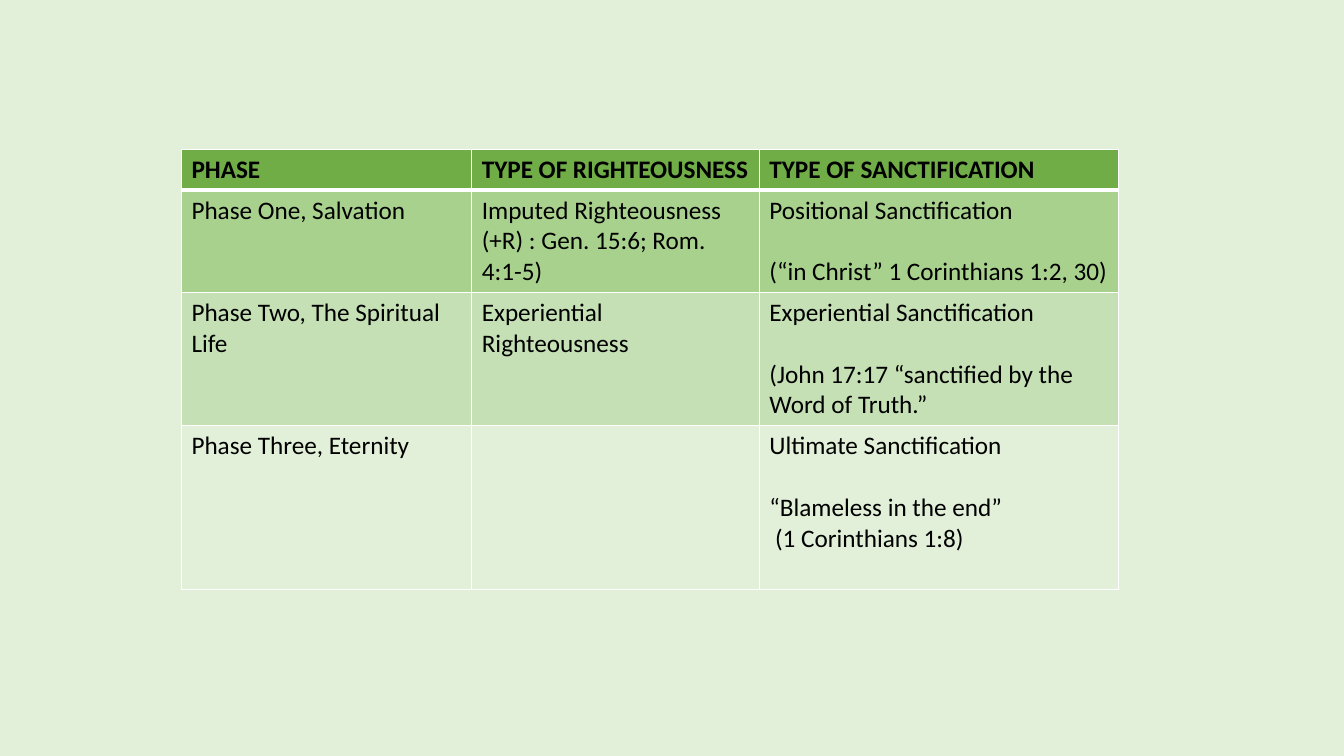
from dataclasses import dataclass

from lxml.etree import SubElement
from pptx import Presentation
from pptx.dml.color import RGBColor as Rgb
from pptx.oxml.ns import qn
from pptx.slide import Slide
from pptx.table import _Cell as Cell
from pptx.util import Inches, Pt

SLIDE_WIDTH = Inches(13.33)
SLIDE_HEIGHT = Inches(7.5)
GRID_COLUMN = SLIDE_WIDTH / 100
GRID_ROW = SLIDE_HEIGHT / 100
TABLE_LEFT, TABLE_TOP = 13.5, 19.73
COLUMN_WIDTHS = (21.6, 21.4, 26.7)
FONT_NAME = "Calibri"
FONT_SIZE = Pt(18)
LINE_GAP = Pt(22)
COLORS = {
    "background": "E2F0D9",
    "header": "70AD47",
    "salvation": "A9D18E",
    "spiritual_life": "C5E0B4",
    "eternity": "E2F0D9",
    "border": "FFFFFF",
    "text": "000000",
}


@dataclass(frozen=True)
class Line:
    text: str
    spaced: bool = False


@dataclass(frozen=True)
class PhaseRow:
    color: str
    height: float
    cells: tuple[tuple[Line, ...], ...]
    bold: bool = False
    top_border: int = 1
    bottom_border: int = 1


ROWS = (
    PhaseRow("header", 5.4, (
        (Line("PHASE"),),
        (Line("TYPE OF RIGHTEOUSNESS"),),
        (Line("TYPE OF SANCTIFICATION"),),
    ), bold=True, bottom_border=3),
    PhaseRow("salvation", 13.5, (
        (Line("Phase One, Salvation"),),
        (Line("Imputed Righteousness (+R) : Gen. 15:6; Rom. 4:1-5)"),),
        (Line("Positional Sanctification"),
         Line("(“in Christ” 1 Corinthians 1:2, 30)", spaced=True)),
    ), top_border=3),
    PhaseRow("spiritual_life", 17.6, (
        (Line("Phase Two, The Spiritual Life"),),
        (Line("Experiential Righteousness"),),
        (Line("Experiential Sanctification"),
         Line("(John 17:17 “sanctified by the Word of Truth.”", spaced=True)),
    )),
    PhaseRow("eternity", 21.7, (
        (Line("Phase Three, Eternity"),),
        (),
        (Line("Ultimate Sanctification"),
         Line("“Blameless in the end”", spaced=True),
         Line(" (1 Corinthians 1:8)")),
    )),
)


def color(name: str) -> Rgb:
    return Rgb.from_string(COLORS[name])


def draw_borders(cell: Cell, row: PhaseRow) -> None:
    properties = cell._tc.get_or_add_tcPr()
    widths = {"lnL": 1, "lnR": 1, "lnT": row.top_border, "lnB": row.bottom_border}
    for side, width in widths.items():
        border = SubElement(properties, qn(f"a:{side}"), w=str(Pt(width)))
        fill = SubElement(border, qn("a:solidFill"))
        SubElement(fill, qn("a:srgbClr"), val=COLORS["border"])


def write_lines(cell: Cell, lines: tuple[Line, ...], bold: bool) -> None:
    frame = cell.text_frame
    for index, line in enumerate(lines):
        paragraph = frame.add_paragraph() if index else frame.paragraphs[0]
        if line.spaced:
            paragraph.space_before = LINE_GAP
        run = paragraph.add_run()
        run.text = line.text
        run.font.name = FONT_NAME
        run.font.size = FONT_SIZE
        run.font.bold = bold
        run.font.color.rgb = color("text")


def draw_table(slide: Slide) -> None:
    table = slide.shapes.add_table(
        len(ROWS), len(COLUMN_WIDTHS),
        round(TABLE_LEFT * GRID_COLUMN), round(TABLE_TOP * GRID_ROW),
        round(sum(COLUMN_WIDTHS) * GRID_COLUMN),
        round(sum(row.height for row in ROWS) * GRID_ROW),
    ).table
    table.horz_banding = False
    for column, width in zip(table.columns, COLUMN_WIDTHS):
        column.width = round(width * GRID_COLUMN)
    for table_row, row in zip(table.rows, ROWS):
        table_row.height = round(row.height * GRID_ROW)
        for cell, lines in zip(table_row.cells, row.cells):
            draw_borders(cell, row)
            cell.fill.solid()
            cell.fill.fore_color.rgb = color(row.color)
            write_lines(cell, lines, row.bold)


def main() -> None:
    presentation = Presentation()
    presentation.slide_width = SLIDE_WIDTH
    presentation.slide_height = SLIDE_HEIGHT
    slide = presentation.slides.add_slide(presentation.slide_layouts[6])
    slide.background.fill.solid()
    slide.background.fill.fore_color.rgb = color("background")
    draw_table(slide)
    presentation.save("out.pptx")


if __name__ == "__main__":
    main()
